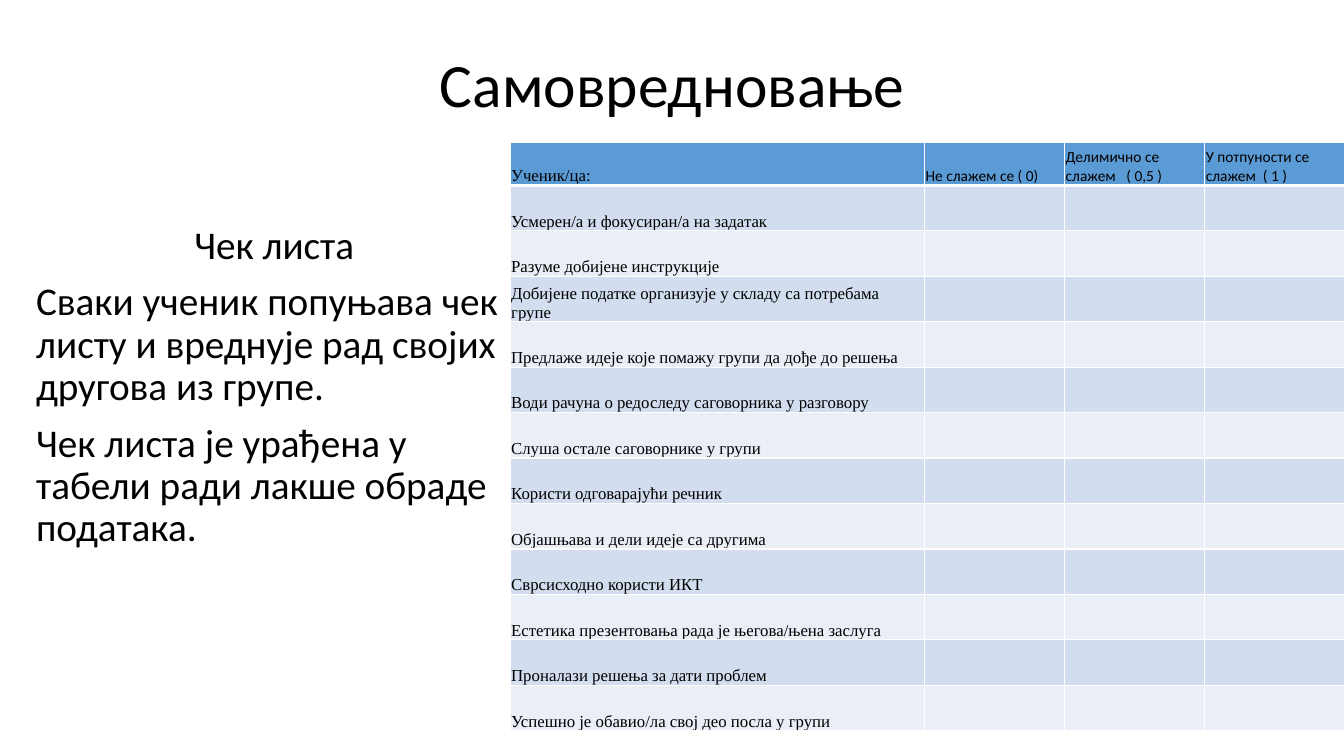
from lxml import etree
from pptx import Presentation
from pptx.dml.color import RGBColor
from pptx.enum.text import MSO_ANCHOR, PP_ALIGN
from pptx.oxml.ns import qn
from pptx.util import Inches, Pt

LEFT, CENTER = PP_ALIGN.LEFT, PP_ALIGN.CENTER
TOP, MIDDLE, BOTTOM = MSO_ANCHOR.TOP, MSO_ANCHOR.MIDDLE, MSO_ANCHOR.BOTTOM

BLACK = RGBColor(0x00, 0x00, 0x00)
WHITE = RGBColor(0xFF, 0xFF, 0xFF)
HEADER_BLUE = RGBColor(0x5B, 0x9B, 0xD5)
BANDS = (RGBColor(0xD2, 0xDE, 0xEF), RGBColor(0xEA, 0xEF, 0xF7))

SANS, SERIF = "Calibri", "Times New Roman"

HEADERS = ["Ученик/ца:", "Не слажем се ( 0)", "Делимично се слажем   ( 0,5 )",
           "У потпуности се слажем  ( 1 )"]
CRITERIA = [
    "Усмерен/а и фокусиран/а на задатак",
    "Разуме добијене инструкције",
    "Добијене податке организује у складу са потребама групе",
    "Предлаже идеје које помажу групи да дође до решења",
    "Води рачуна о редоследу саговорника у разговору",
    "Слуша остале саговорнике у групи",
    "Користи одговарајући речник",
    "Објашњава и дели идеје са другима",
    "Сврсисходно користи ИКТ",
    "Естетика презентовања рада је његова/њена заслуга",
    "Проналази решења за дати проблем",
    "Успешно је обавио/ла свој део посла у групи",
]
CHECKLIST_NOTES = [
    ("Чек листа", CENTER),
    ("Сваки ученик попуњава чек листу и вреднује рад својих другова из групе.", LEFT),
    ("Чек листа је урађена у табели ради лакше обраде података.", LEFT),
]


def write(p, text, size=12, font=SANS, align=LEFT, line=1.0, before=0):
    p.alignment = align
    p.line_spacing = line
    p.space_before = Pt(before)
    r = p.add_run()
    r.text = text
    r.font.size = Pt(size)
    r.font.name = font
    r.font.bold = False
    r.font.color.rgb = BLACK


def add_frame(s, x, y, w, h, anchor):
    tf = s.shapes.add_textbox(Inches(x), Inches(y), Inches(w), Inches(h)).text_frame
    tf.word_wrap = True
    tf.vertical_anchor = anchor
    return tf


def add_title(s, x, y, w, h):
    tf = add_frame(s, x, y, w, h, MIDDLE)
    write(tf.paragraphs[0], "Самовредновање", size=44, align=CENTER, line=0.9)


def add_notes(s, x, y, w, h):
    tf = add_frame(s, x, y, w, h, TOP)
    for i, (text, align) in enumerate(CHECKLIST_NOTES):
        p = tf.add_paragraph() if i else tf.paragraphs[0]
        write(p, text, size=28, align=align, line=0.9, before=10)


def set_borders(cell, **widths):
    tc_pr = cell._tc.get_or_add_tcPr()
    for i, (side, width) in enumerate(widths.items()):
        ln = etree.Element(qn(f"a:ln{side}"), w=str(Pt(width)))
        fill = etree.SubElement(ln, qn("a:solidFill"))
        etree.SubElement(fill, qn("a:srgbClr"), val=str(WHITE))
        tc_pr.insert(i, ln)


def add_checklist(s, x, y, w, h):
    rows = [HEADERS] + [[text, "", "", ""] for text in CRITERIA]
    table = s.shapes.add_table(len(rows), len(HEADERS), Inches(x), Inches(y),
                               Inches(w), Inches(h)).table
    table.first_row = table.horz_banding = False
    score_w = 1.39
    for c, column in enumerate(table.columns):
        column.width = Inches(score_w if c else w - 3 * score_w)
    header_h = 0.43
    for i, row in enumerate(rows):
        table.rows[i].height = Inches((h - header_h) / len(CRITERIA) if i else header_h)
        for c, text in enumerate(row):
            cell = table.cell(i, c)
            cell.vertical_anchor = BOTTOM
            cell.margin_left = cell.margin_right = cell.margin_top = Inches(0.01)
            cell.margin_bottom = 0
            cell.fill.solid()
            cell.fill.fore_color.rgb = BANDS[(i - 1) % 2] if i else HEADER_BLUE
            set_borders(cell, L=1, R=1, T=3 if i == 1 else 1, B=1 if i else 3)
            if text:
                write(cell.text_frame.paragraphs[0], text, size=11 if c else 12,
                      font=SANS if c else SERIF)


def main():
    prs = Presentation()
    prs.slide_width, prs.slide_height = Inches(13.33), Inches(7.5)
    s = prs.slides.add_slide(prs.slide_layouts[6])
    add_title(s, 0.92, 0.4, 11.5, 0.93)
    add_notes(s, 0.26, 2.19, 4.92, 4.28)
    add_checklist(s, 5.06, 1.41, 8.28, 5.84)
    prs.save("out.pptx")


if __name__ == "__main__":
    main()
